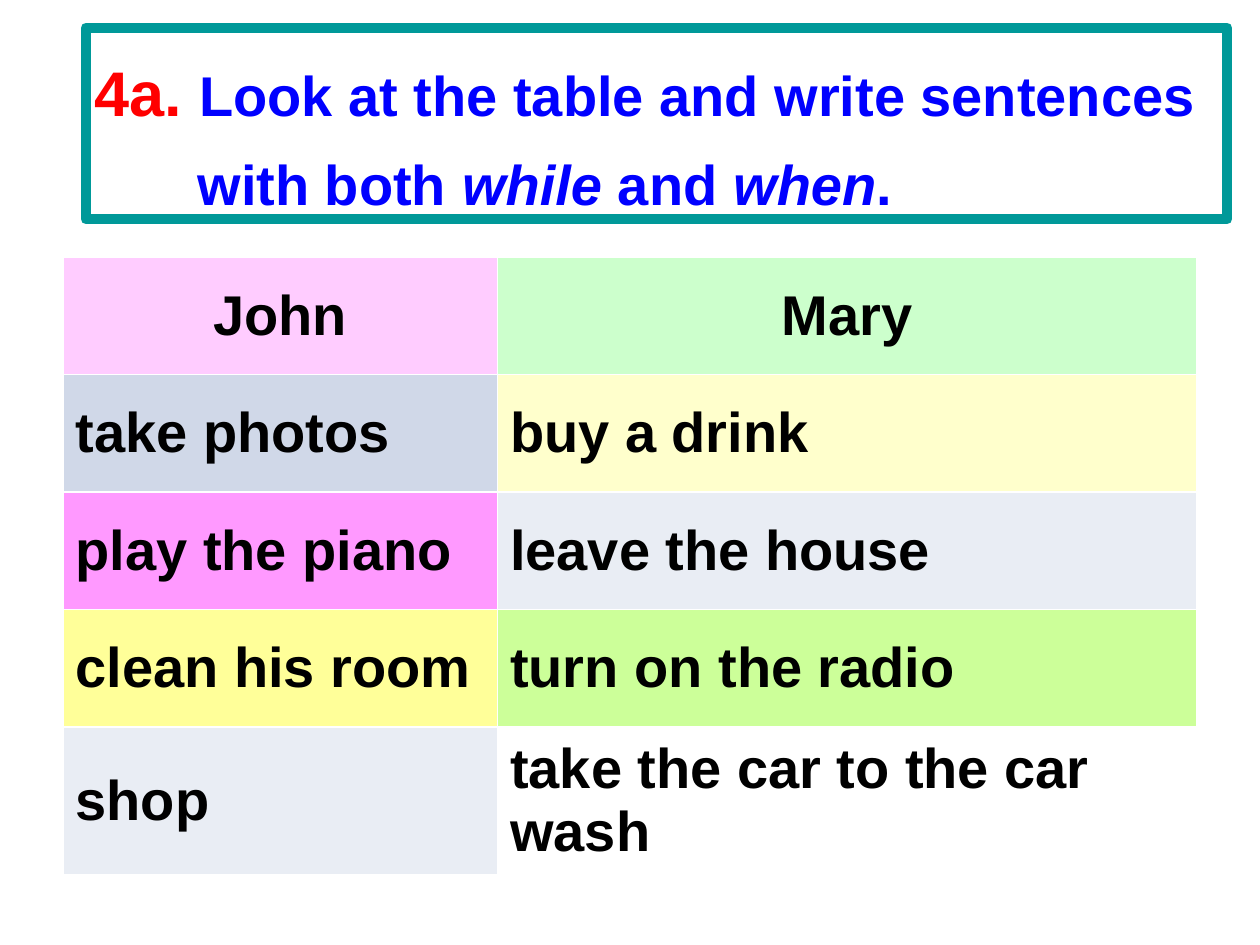
import pptx
import pptx.util
import pptx.oxml
import pptx.oxml.ns
from pptx.dml.color import RGBColor
from pptx.enum.text import MSO_ANCHOR, MSO_AUTO_SIZE, PP_ALIGN
from pptx.util import Cm, Pt

RED = RGBColor(0xFF, 0x00, 0x00)
BLUE = RGBColor(0x00, 0x00, 0xFF)
TEAL = RGBColor(0x00, 0x99, 0x99)
BLACK = RGBColor(0x00, 0x00, 0x00)
WHITE = RGBColor(0xFF, 0xFF, 0xFF)
PINK = RGBColor(0xFF, 0xCC, 0xFF)
MINT = RGBColor(0xCC, 0xFF, 0xCC)
STEEL = RGBColor(0xD0, 0xD8, 0xE8)
CREAM = RGBColor(0xFF, 0xFF, 0xCC)
MAGENTA = RGBColor(0xFF, 0x99, 0xFF)
MIST = RGBColor(0xE9, 0xED, 0xF4)
YELLOW = RGBColor(0xFF, 0xFF, 0x99)
LIME = RGBColor(0xCC, 0xFF, 0x99)

# Content
BODY = dict(name="Arial", size=Pt(32), bold=True, italic=False)
NUMBER = dict(BODY, size=Pt(36))
ITALIC = dict(BODY, italic=True)
TITLE = [  # left indent in cm, runs of (text, format, colour)
    (0, [("4a. ", NUMBER, RED),
         ("Look at the table and write sentences", BODY, BLUE)]),
    (2.08, [("with both ", BODY, BLUE), ("while ", ITALIC, BLUE),
            ("and ", BODY, BLUE), ("when", ITALIC, BLUE), (".", BODY, BLUE)]),
]
ROWS = [  # (text, fill) for each person
    [("John", PINK), ("Mary", MINT)],
    [("take photos", STEEL), ("buy a drink", CREAM)],
    [("play the piano", MAGENTA), ("leave the house", MIST)],
    [("clean his room", YELLOW), ("turn on the radio", LIME)],
    [("shop", MIST), ("take the car to the car wash", WHITE)],
]
COL_WIDTHS = [8.76, 14.1]
ROW_HEIGHTS = [2.37] * 4 + [2.97]


def add_run(p, text, fmt, color):
    r = p.add_run()
    r.text = text
    for key, value in fmt.items():
        setattr(r.font, key, value)
    r.font.color.rgb = color


prs = pptx.Presentation()
prs.slide_width, prs.slide_height = Cm(25.4), Cm(19.05)
s = prs.slides.add_slide(prs.slide_layouts[5])

# Title in a rounded frame
sp = s.shapes.title
sp.left, sp.top, sp.width, sp.height = Cm(1.73), Cm(0.56), Cm(23.01), Cm(3.86)
sp.element.spPr.append(pptx.oxml.parse_xml(
    '<a:prstGeom %s prst="flowChartAlternateProcess"><a:avLst/></a:prstGeom>'
    % pptx.oxml.ns.nsdecls("a")))
sp.fill.solid()
sp.fill.fore_color.rgb = WHITE
sp.line.color.rgb = TEAL
sp.line.width = Pt(6)

tf = sp.text_frame
frame_format = dict(word_wrap=True, auto_size=MSO_AUTO_SIZE.NONE,
                    vertical_anchor=MSO_ANCHOR.MIDDLE,
                    margin_left=Cm(0.17), margin_right=Cm(0))
for key, value in frame_format.items():
    setattr(tf, key, value)
for i, (indent, runs) in enumerate(TITLE):
    p = tf.add_paragraph() if i else tf.paragraphs[0]
    p.alignment = PP_ALIGN.LEFT
    p.line_spacing = 1.3
    pPr = p._p.get_or_add_pPr()
    pPr.set("marL", str(Cm(indent)))
    pPr.set("indent", "0")
    for run in runs:
        add_run(p, *run)

# Table of activities
table = s.shapes.add_table(len(ROWS), len(COL_WIDTHS), Cm(1.27), Cm(5.18),
                           Cm(sum(COL_WIDTHS)), Cm(sum(ROW_HEIGHTS))).table
for column, width in zip(table.columns, COL_WIDTHS):
    column.width = Cm(width)
for i, (row, height) in enumerate(zip(ROWS, ROW_HEIGHTS)):
    table.rows[i].height = Cm(height)
    for j, (text, fill) in enumerate(row):
        cell = table.cell(i, j)
        cell.vertical_anchor = MSO_ANCHOR.MIDDLE
        cell.fill.solid()
        cell.fill.fore_color.rgb = fill
        p = cell.text_frame.paragraphs[0]
        p.alignment = PP_ALIGN.LEFT if i else PP_ALIGN.CENTER
        add_run(p, text, BODY, BLACK)

prs.save("out.pptx")
